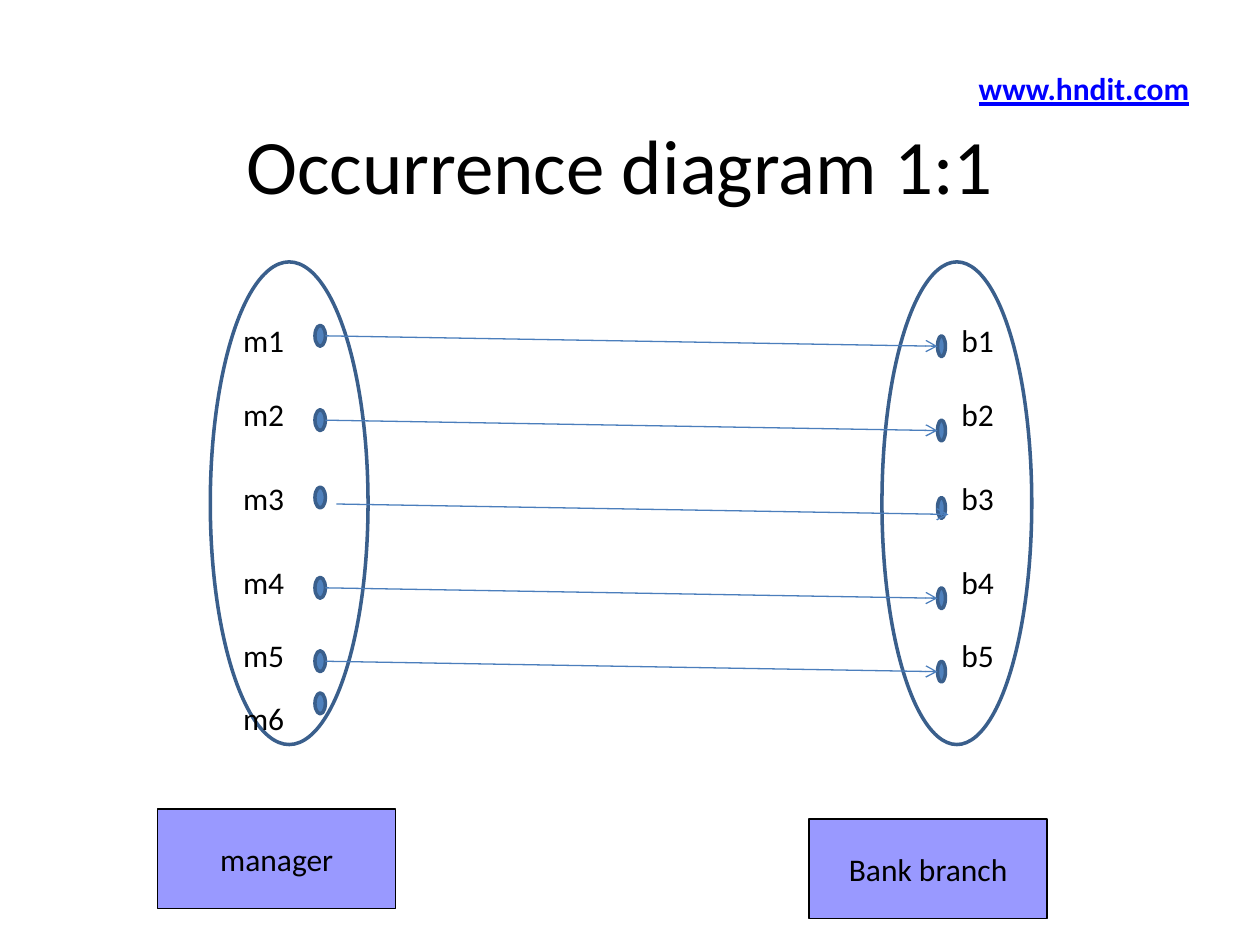
import pptx
import pptx.dml.color
import pptx.enum.shapes
import pptx.enum.text
import pptx.oxml.ns
import pptx.util
from lxml import etree

Cm = pptx.util.Cm
Pt = pptx.util.Pt
SHAPES = pptx.enum.shapes.MSO_SHAPE
ALIGN = pptx.enum.text.PP_ALIGN
ANCHOR = pptx.enum.text.MSO_ANCHOR


def color(value):
    return pptx.dml.color.RGBColor.from_string(value)


class SlideBuilder:
    font = "Calibri"
    black = "000000"
    outline = "3A5F8C"
    dot_fill = "4F81BD"
    arrow_color = "4B7EBC"
    box_fill = "9999FF"
    link_color = "0000FF"

    def __init__(self, deck):
        self.page = deck.slides.add_slide(deck.slide_layouts[5])

    def set_text(self, frame, text, size=18, ink=black, align=ALIGN.LEFT):
        frame.text = text
        para = frame.paragraphs[0]
        para.alignment = align
        span = para.runs[0]
        span.font.name = self.font
        span.font.size = Pt(size)
        span.font.color.rgb = color(ink)
        return span

    def title(self, text, left, top, width, height):
        box = self.page.shapes.title
        box.left, box.top, box.width, box.height = Cm(left), Cm(top), Cm(width), Cm(height)
        box.text_frame.vertical_anchor = ANCHOR.MIDDLE
        self.set_text(box.text_frame, text, 44, align=ALIGN.CENTER)

    def shape(self, kind, left, top, width, height, fill=None, line=outline, weight=2):
        shape = self.page.shapes.add_shape(kind, Cm(left), Cm(top), Cm(width), Cm(height))
        shape.shadow.inherit = False
        if fill:
            shape.fill.solid()
            shape.fill.fore_color.rgb = color(fill)
        else:
            shape.fill.background()
        shape.line.color.rgb = color(line)
        shape.line.width = Pt(weight)
        return shape

    def entity(self, text, left, top):
        box = self.shape(SHAPES.RECTANGLE, left, top, 4.8, 2.01, self.box_fill, self.black, 0.75)
        box.text_frame.word_wrap = False
        box.text_frame.vertical_anchor = ANCHOR.MIDDLE
        self.set_text(box.text_frame, text, align=ALIGN.CENTER)

    def label(self, text, left, top, width, wrap=True, ink=black):
        box = self.page.shapes.add_textbox(Cm(left), Cm(top), Cm(width), Cm(1.03))
        box.text_frame.word_wrap = wrap
        return self.set_text(box.text_frame, text, ink=ink)

    def arrow(self, x1, y1, x2, y2):
        connector = self.page.shapes.add_connector(
            pptx.enum.shapes.MSO_CONNECTOR.STRAIGHT, Cm(x1), Cm(y1), Cm(x2), Cm(y2))
        connector.line.color.rgb = color(self.arrow_color)
        connector.line.width = Pt(0.75)
        qn = pptx.oxml.ns.qn
        properties = connector._element.spPr
        etree.SubElement(properties.find(qn("a:ln")), qn("a:tailEnd"), type="arrow")
        etree.SubElement(properties, qn("a:effectLst"))


def main():
    deck = pptx.Presentation()
    deck.slide_width, deck.slide_height = Cm(25.4), Cm(19.05)
    slide = SlideBuilder(deck)
    slide.title("Occurrence diagram 1:1", 1.07, 1.7, 22.86, 3.18)

    # Entity sets and their names
    slide.shape(SHAPES.OVAL, 4.24, 5.28, 3.18, 9.73)
    slide.shape(SHAPES.OVAL, 17.78, 5.28, 3.02, 9.73)
    slide.entity("manager", 3.18, 16.31)
    slide.entity("Bank branch", 16.31, 16.51)

    # Members: dot and label tops; the last manager has no branch
    dot_tops = [6.56, 8.26, 9.82, 11.64, 13.12, 13.97]
    label_tops = [6.35, 7.83, 9.53, 11.22, 12.7, 13.97]
    branch_count = 5
    drop = 0.21  # branch dots sit lower than manager dots
    dot_height = 0.42
    for number, (dot_top, label_top) in enumerate(zip(dot_tops, label_tops), 1):
        slide.shape(SHAPES.OVAL, 6.35, dot_top, 0.21, dot_height, slide.dot_fill)
        slide.label(f"m{number}", 4.65, label_top, 1.48)
        if number > branch_count:
            continue
        slide.shape(SHAPES.OVAL, 18.9, dot_top + drop, 0.16, dot_height, slide.dot_fill)
        slide.label(f"b{number}", 19.13, label_top, 1.42)
        # The third arrow is set a little off its dots
        shift_x, shift_y = (0.22, 0.13) if number == 3 else (0, 0)
        start_y = dot_top + dot_height / 2 + shift_y
        slide.arrow(6.56 + shift_x, start_y, 18.9 + shift_x, start_y + drop)

    # Web address
    address = slide.label("www.hndit.com", 19.48, 1.27, 4.78, False, slide.link_color)
    address.font.bold = True
    address.font.underline = True

    deck.save("out.pptx")


if __name__ == "__main__":
    main()
